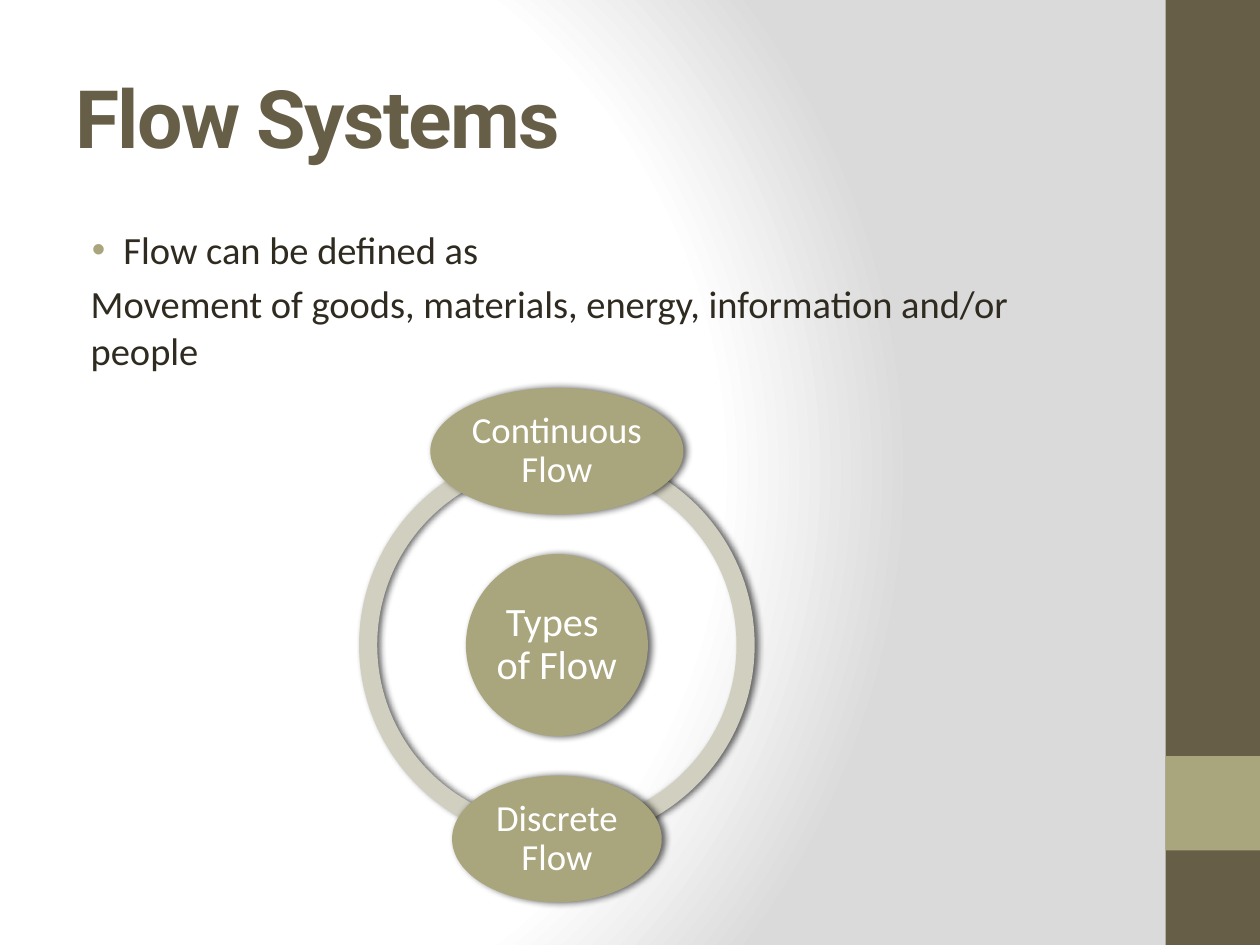
from lxml.etree import SubElement
from pptx import Presentation
from pptx.dml.color import RGBColor
from pptx.enum.shapes import MSO_SHAPE as Preset
from pptx.enum.text import MSO_ANCHOR as Anchor, MSO_AUTO_SIZE as AutoSize, PP_ALIGN as Align
from pptx.oxml.ns import qn
from pptx.util import Inches, Pt

WIDTH, HEIGHT = Inches(10), Inches(7.5)
BROWN = RGBColor(0x67, 0x5E, 0x47)
OLIVE = RGBColor(0xA9, 0xA5, 0x7C)
PALE_OLIVE = RGBColor(0xD1, 0xCF, 0xBF)
INK = RGBColor(0x2F, 0x2B, 0x20)
WHITE = RGBColor(0xFF, 0xFF, 0xFF)
GREY = RGBColor(0xDA, 0xDA, 0xDA)
BLACK = RGBColor(0, 0, 0)


def add_xml(parent, tag, **attributes):
    return SubElement(parent, qn(tag), {key: str(value) for key, value in attributes.items()})


def share(left, top, width, height):
    """Turn shares of the slide's size into a box of lengths."""
    return tuple(round(part * full) for part, full in
                 zip((left, top, width, height), (WIDTH, HEIGHT) * 2))


def place(shape, area):
    shape.left, shape.top, shape.width, shape.height = area


def style(para, font, size, colour, bold=False):
    for span in para.runs:
        span.font.name, span.font.size, span.font.bold = font, Pt(size), bold
        span.font.color.rgb = colour


def add_filled(page, preset, area, colour):
    shape = page.shapes.add_shape(preset, *area)
    shape.shadow.inherit = False
    shape.fill.solid()
    shape.fill.fore_color.rgb = colour
    shape.line.fill.background()
    return shape


def cast_shadow(shape):
    effects = shape.element.spPr.find(qn("a:effectLst"))
    shadow = add_xml(effects, "a:outerShdw", blurRad=Pt(4), dist=Pt(2), dir=0,
                     algn="ctr", rotWithShape=0)
    add_xml(add_xml(shadow, "a:srgbClr", val=BLACK), "a:alpha", val=60000)


def paint_background(page):
    """Fade from white at the left to grey at the right in circles."""
    page.background.fill.solid()
    properties = page.element.cSld.find(qn("p:bg")).find(qn("p:bgPr"))
    properties.remove(properties.find(qn("a:solidFill")))
    gradient = add_xml(properties, "a:gradFill", rotWithShape=1)
    properties.insert(0, gradient)
    stops = add_xml(gradient, "a:gsLst")
    for percent, colour in ((0, WHITE), (75, WHITE), (100, GREY)):
        add_xml(add_xml(stops, "a:gs", pos=percent * 1000), "a:srgbClr", val=colour)
    circle = add_xml(gradient, "a:path", path="circle")
    add_xml(circle, "a:fillToRect", l=20000, t=50000, r=100000, b=50000)


def add_sidebar(page, area):
    left, top, width, height = area
    add_filled(page, Preset.RECTANGLE, area, BROWN)
    add_filled(page, Preset.RECTANGLE, (left, top + round(height * 0.8), width, width), OLIVE)


def fill_title(title, area):
    place(title, area)
    frame = title.text_frame
    frame.text = "Flow Systems"
    frame.auto_size, frame.vertical_anchor = AutoSize.NONE, Anchor.MIDDLE
    para = frame.paragraphs[0]
    para.alignment = Align.LEFT
    style(para, "Roboto", 46, BROWN, bold=True)
    para.runs[0]._r.get_or_add_rPr().set("spc", "-100")


def fill_body(body, area):
    place(body, area)
    frame = body.text_frame
    frame.text = ("Flow can be defined as\n"
                  "Movement of goods, materials, energy, information and/or people")
    frame.auto_size = AutoSize.NONE
    margins = ((0.38, -0.25), (0.12, 0))
    for para, (margin, indent) in zip(frame.paragraphs, margins):
        para.space_before = Pt(4.4)
        style(para, "Calibri", 22, INK)
        properties = para._p.get_or_add_pPr()
        properties.set("marL", str(Inches(margin)))
        properties.set("indent", str(Inches(indent)))
        if indent:
            add_xml(add_xml(properties, "a:buClr"), "a:srgbClr", val=OLIVE)
            add_xml(properties, "a:buFont", typeface="Arial")
            add_xml(properties, "a:buChar", char="•")
        else:
            add_xml(properties, "a:buNone")


def add_oval(page, centre, size, text, points):
    (x, y), (width, height) = centre, size
    oval = add_filled(page, Preset.OVAL, (x - width // 2, y - height // 2, width, height), OLIVE)
    cast_shadow(oval)
    frame = oval.text_frame
    frame.text, frame.word_wrap, frame.vertical_anchor = text, True, Anchor.MIDDLE
    frame.margin_left = frame.margin_right = Inches(0.03)
    frame.margin_top = frame.margin_bottom = Inches(0.03)
    para = frame.paragraphs[0]
    para.alignment, para.line_spacing = Align.CENTER, 0.9
    style(para, "Calibri", points, WHITE)


def add_flow_ring(page, area):
    """Draw the ring, its hub and an oval at the top and bottom of the band."""
    left, top, width, height = area
    for start, end in ((54, 162), (162, 54)):
        arc = add_filled(page, Preset.BLOCK_ARC, area, PALE_OLIVE)
        arc.adjustments[0], arc.adjustments[1], arc.adjustments[2] = start, end, 0.046
        cast_shadow(arc)
    x, y = left + width // 2, top + height // 2
    reach = round(height * 0.49)
    hub, oval_height = round(width * 0.46), round(height * 0.32)
    add_oval(page, (x, y), (hub, hub), "Types \vof Flow", 23)
    add_oval(page, (x, y - reach), (round(width * 0.64), oval_height), "Continuous Flow", 21)
    add_oval(page, (x, y + reach), (round(width * 0.53), oval_height), "Discrete Flow", 21)


def main():
    deck = Presentation()
    deck.slide_width, deck.slide_height = WIDTH, HEIGHT
    page = deck.slides.add_slide(deck.slide_layouts[1])
    paint_background(page)
    add_sidebar(page, share(0.925, 0, 0.075, 1))
    fill_title(page.shapes.title, share(0.05, 0.04, 0.833, 0.167))
    fill_body(page.placeholders[1], share(0.05, 0.233, 0.833, 0.223))
    add_flow_ring(page, (Inches(2.85), Inches(3.55), Inches(3.14), Inches(3.14)))
    deck.save("out.pptx")


if __name__ == "__main__":
    main()
